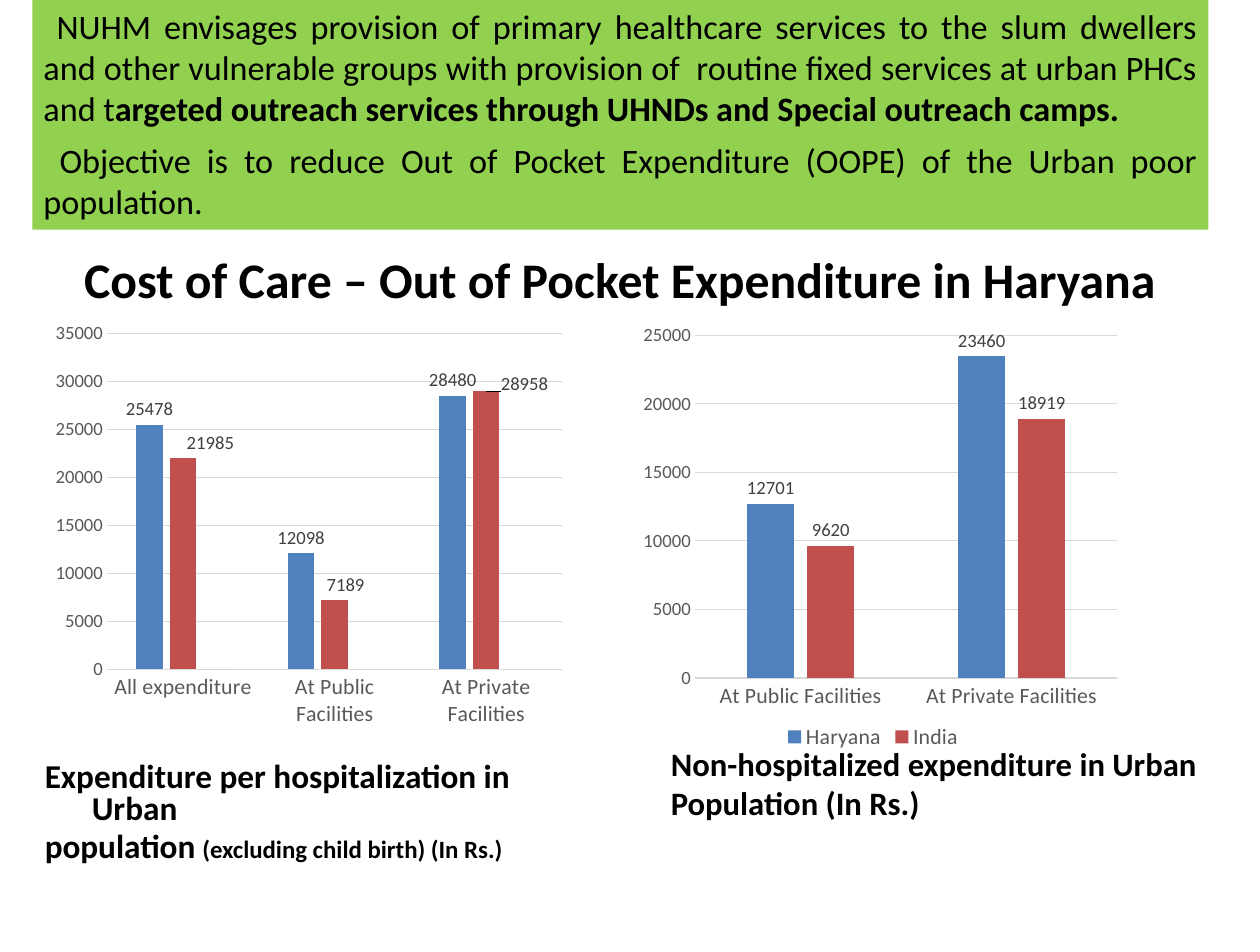
from dataclasses import dataclass, field

from lxml import etree
from pptx import Presentation
from pptx.chart.chart import Chart
from pptx.chart.data import CategoryChartData
from pptx.dml.color import RGBColor
from pptx.enum.chart import XL_CHART_TYPE, XL_LABEL_POSITION, XL_LEGEND_POSITION, XL_TICK_MARK
from pptx.enum.shapes import MSO_SHAPE
from pptx.enum.text import MSO_ANCHOR, MSO_AUTO_SIZE, PP_ALIGN
from pptx.oxml.ns import qn
from pptx.util import Inches, Pt

COLUMNS = XL_CHART_TYPE.COLUMN_CLUSTERED
OUTSIDE_END = XL_LABEL_POSITION.OUTSIDE_END
BOTTOM = XL_LEGEND_POSITION.BOTTOM
NO_TICK = XL_TICK_MARK.NONE
RECTANGLE = MSO_SHAPE.RECTANGLE
TOP = MSO_ANCHOR.TOP
NO_AUTOFIT = MSO_AUTO_SIZE.NONE
CENTER, JUSTIFY = PP_ALIGN.CENTER, PP_ALIGN.JUSTIFY

FONT = "Calibri"
BLACK, GREEN = "000000", "92D050"
GRID, AXIS_TEXT, LABEL_TEXT = "D9D9D9", "595959", "404040"
SERIES_COLORS = ("4F81BD", "C0504D", "9BBB59")
LEFT, WIDTH = 0.29, 10.5
INDENT = 0.42


@dataclass
class Series:
    name: str
    values: tuple
    labelled: bool = True
    label_offsets: tuple = ()


@dataclass
class CostChart:
    box: tuple
    plot: tuple
    maximum: int
    categories: tuple
    series: tuple
    legend: bool = False


@dataclass
class Run:
    text: str
    size: float
    bold: bool = False


@dataclass
class Para:
    runs: tuple
    align: PP_ALIGN | None = None
    line_spacing: float | None = None
    space_before: float = 0
    hanging: bool = False
    margin: float = 0


@dataclass
class Block:
    box: tuple
    paras: tuple = field(default_factory=tuple)
    insets: tuple = (0.1, 0.05)


CHARTS = (
    CostChart((LEFT, 2.81, 4.88, 3.94), (0.137, 0.042, 0.832, 0.762), 35000,
              ("All expenditure", "At Public Facilities", "At Private Facilities"),
              (Series("Series 1", (25478, 12098, 28480)),
               Series("Series 2", (21985, 7189, 28958),
                      label_offsets=((0.05, 0), (0.02, 0), (0.07, 0.02))),
               Series("Series 3", (0, None, None), labelled=False))),
    CostChart((5.46, 2.82, 4.67, 3.92), (0.16, 0.044, 0.807, 0.781), 25000,
              ("At Public Facilities", "At Private Facilities"),
              (Series("Haryana", (12701, 23460)), Series("India", (9620, 18919))),
              legend=True),
)

INTRO = Block((LEFT, 0, WIDTH, 2.05), (
    Para((Run(" NUHM envisages provision of primary healthcare services to the slum dwellers "
              "and other vulnerable groups with provision of  routine fixed services at urban "
              "PHCs and t", 22),
          Run("argeted outreach services through UHNDs and Special outreach camps. ", 22, True)),
         JUSTIFY),
    Para((Run(" Objective is to reduce Out of Pocket Expenditure (OOPE) of the Urban poor "
              "population.", 22),), JUSTIFY, space_before=6.8),
))
TITLE = Block((LEFT, 2.17, WIDTH, 0.64), (
    Para((Run("Cost of Care – Out of Pocket Expenditure in Haryana", 32, True),), CENTER),
))
CAPTIONS = (
    Block((LEFT, 6.75, 5.17, 0.83), (
        Para((Run("Expenditure per hospitalization in Urban", 21.4, True),),
             line_spacing=0.8, hanging=True, margin=INDENT),
        Para((Run("population", 21.4, True), Run(" ", 19.3, True),
              Run("(excluding child birth) (In Rs.)", 16, True)),
             line_spacing=0.8, space_before=4.3, hanging=True, margin=INDENT),
    ), (0.11, 0.06)),
    Block((5.46, 6.58, 5.5, 0.75), (
        Para((Run("Non-hospitalized expenditure in Urban Population (In Rs.)", 21, True),),
             margin=INDENT),
    ), (0.11, 0.06)),
)


def rgb(color: str) -> RGBColor:
    return RGBColor.from_string(color)


def inches(box: tuple) -> list:
    return [Inches(n) for n in box]


def set_font(font, size: float, color: str) -> None:
    font.name, font.size = FONT, Pt(size)
    font.color.rgb = rgb(color)


def set_line(line, color: str) -> None:
    line.color.rgb = rgb(color)
    line.width = Pt(0.75)


def write(sp, block: Block) -> None:
    sp.left, sp.top, sp.width, sp.height = inches(block.box)
    tf = sp.text_frame
    tf.word_wrap, tf.auto_size, tf.vertical_anchor = True, NO_AUTOFIT, TOP
    tf.margin_left = tf.margin_right = Inches(block.insets[0])
    tf.margin_top = tf.margin_bottom = Inches(block.insets[1])
    for i, para in enumerate(block.paras):
        p = tf.add_paragraph() if i else tf.paragraphs[0]
        p.alignment, p.line_spacing = para.align, para.line_spacing
        p.space_before = Pt(para.space_before)
        if para.margin:
            pPr = p._p.get_or_add_pPr()
            pPr.set("marL", str(Inches(para.margin)))
            pPr.set("indent", str(-Inches(para.margin) if para.hanging else 0))
        set_font(p.font, para.runs[0].size, BLACK)
        for run in para.runs:
            r = p.add_run()
            r.text = run.text
            r.font.size, r.font.bold = Pt(run.size), run.bold


def manual_layout(**settings) -> etree._Element:
    """Make a chart layout element from its settings, given in schema order."""
    layout = etree.Element(qn("c:layout"))
    manual = etree.SubElement(layout, qn("c:manualLayout"))
    for name, value in settings.items():
        etree.SubElement(manual, qn(f"c:{name}")).set("val", str(value))
    return layout


def place_plot(chart: Chart, plot: tuple) -> None:
    area = chart._chartSpace.find(".//" + qn("c:plotArea"))
    for old in area.findall(qn("c:layout")):
        area.remove(old)
    x, y, w, h = plot
    area.insert(0, manual_layout(layoutTarget="inner", xMode="edge", yMode="edge",
                                 x=x, y=y, w=w, h=h))


def label_series(drawn, series: Series) -> None:
    labels = drawn.data_labels
    labels.show_value, labels.position = True, OUTSIDE_END
    set_font(labels.font, 12, LABEL_TEXT)
    for i, (x, y) in enumerate(series.label_offsets):
        label = drawn.points[i].data_label
        set_font(label.font, 12, LABEL_TEXT)
        label.position = OUTSIDE_END
    for dLbl, (x, y) in zip(labels._element.findall(qn("c:dLbl")), series.label_offsets):
        dLbl.insert(1, manual_layout(x=x, y=y))


def add_cost_chart(slide, cost: CostChart) -> None:
    data = CategoryChartData()
    data.categories = cost.categories
    for series in cost.series:
        data.add_series(series.name, series.values)
    chart = slide.shapes.add_chart(COLUMNS, *inches(cost.box), data).chart
    set_font(chart.font, 10, BLACK)
    chart.has_title = False
    chart.has_legend = cost.legend
    if cost.legend:
        chart.legend.position, chart.legend.include_in_layout = BOTTOM, False
        set_font(chart.legend.font, 14, AXIS_TEXT)
    for axis, size in ((chart.category_axis, 14), (chart.value_axis, 12)):
        axis.major_tick_mark = axis.minor_tick_mark = NO_TICK
        set_font(axis.tick_labels.font, size, AXIS_TEXT)
    set_line(chart.category_axis.format.line, GRID)
    values = chart.value_axis
    values.minimum_scale, values.maximum_scale, values.major_unit = 0, cost.maximum, 5000
    values.format.line.fill.background()
    set_line(values.major_gridlines.format.line, GRID)
    plot = chart.plots[0]
    plot.vary_by_categories, plot.gap_width, plot.overlap = False, 219, -27
    for drawn, series, color in zip(plot.series, cost.series, SERIES_COLORS):
        drawn.format.fill.solid()
        drawn.format.fill.fore_color.rgb = rgb(color)
        if series.labelled:
            label_series(drawn, series)
    place_plot(chart, cost.plot)


def main() -> None:
    prs = Presentation()
    prs.slide_width, prs.slide_height = Inches(11.25), Inches(8.5)
    slide = prs.slides.add_slide(prs.slide_layouts[5])
    for cost in CHARTS:
        add_cost_chart(slide, cost)
    for caption in CAPTIONS:
        write(slide.shapes.add_textbox(*inches(caption.box)), caption)
    intro = slide.shapes.add_shape(RECTANGLE, *inches(INTRO.box))
    intro.shadow.inherit = False
    intro.fill.solid()
    intro.fill.fore_color.rgb = rgb(GREEN)
    intro.line.fill.background()
    write(intro, INTRO)
    write(slide.shapes.title, TITLE)
    prs.save("out.pptx")


if __name__ == "__main__":
    main()
